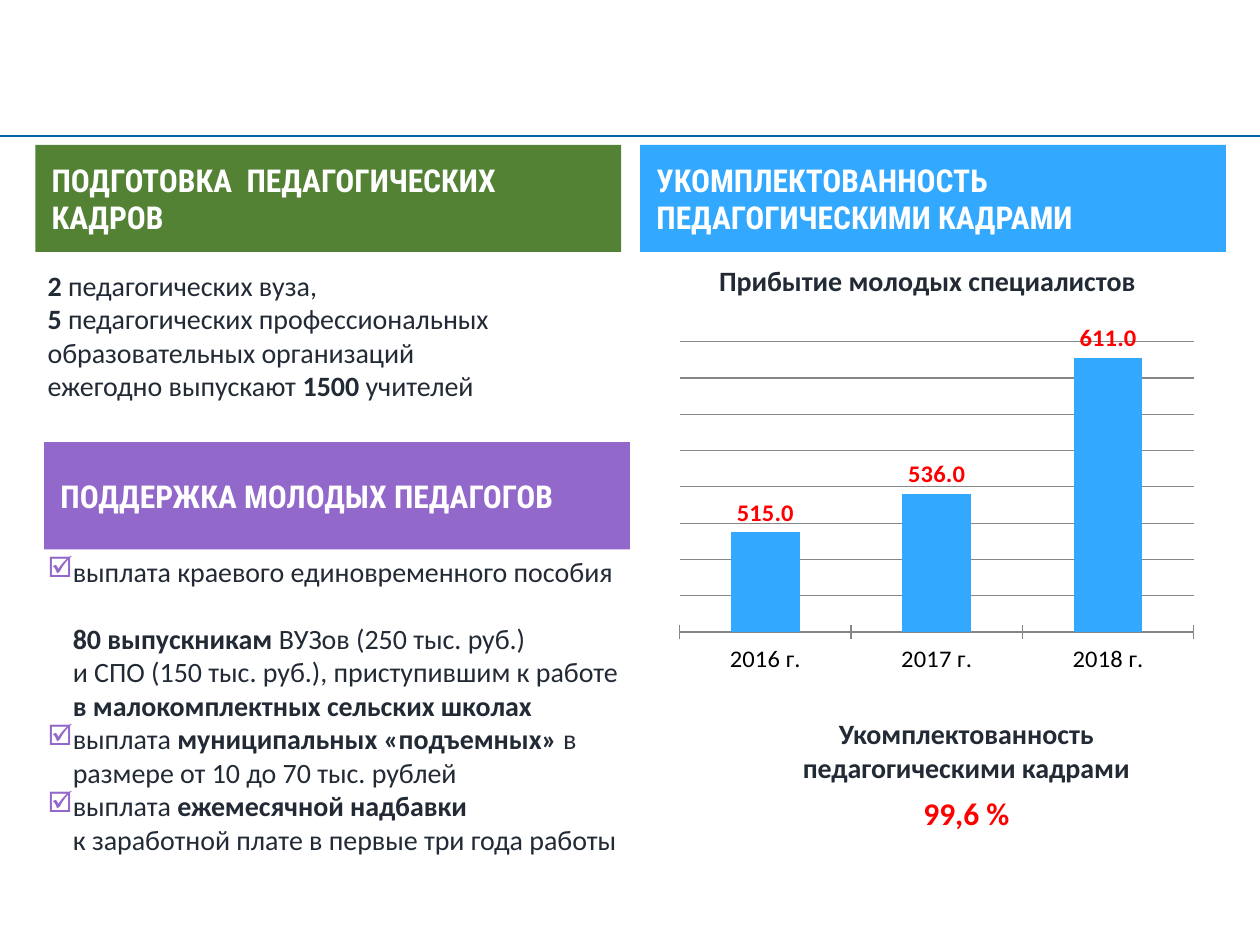
from lxml import etree
from pptx import Presentation
from pptx.chart import data
from pptx.dml import color
from pptx.enum import chart as ch, shapes, text
from pptx.oxml import ns
from pptx.util import Inches, Pt


def rgb(code):
    return color.RGBColor.from_string(code)


def write(box, paras, align=text.PP_ALIGN.LEFT):
    frame = box.text_frame
    frame.word_wrap = True
    for i, (size, tone, face, runs) in enumerate(paras):
        para = frame.add_paragraph() if i else frame.paragraphs[0]
        para.alignment = align
        para.font.size = Pt(size)
        para.font.name = face
        para.font.color.rgb = rgb(tone)
        bolds = {bold for _, bold in runs}
        if len(bolds) == 1:
            para.font.bold = bolds.pop()
        for words, bold in runs:
            for n, part in enumerate(words.split("\n")):
                if n:
                    para.add_line_break()
                if part:
                    run = para.add_run()
                    run.text = part
                    if para.font.bold is None:
                        run.font.bold = bold
    return frame


INK, RED, BLUE, PURPLE = "222A35", "FF0000", "33A8FF", "9268CA"
BODY = (16, INK, "Calibri")

deck = Presentation()
deck.slide_width, deck.slide_height = Inches(10), Inches(7.5)
slide = deck.slides.add_slide(deck.slide_layouts[6])
items = slide.shapes

rule = items.add_connector(
    shapes.MSO_CONNECTOR.STRAIGHT, 0, Inches(1.08), Inches(10), Inches(1.08))
rule.line.color.rgb = rgb("0068A6")
rule.line.width = Pt(1)
etree.SubElement(rule._element.spPr, ns.qn("a:effectLst"))

heads = [
    (5.08, 1.15, BLUE, "УКОМПЛЕКТОВАННОСТЬ ПЕДАГОГИЧЕСКИМИ КАДРАМИ"),
    (0.28, 1.15, "548235", "ПОДГОТОВКА  ПЕДАГОГИЧЕСКИХ КАДРОВ"),
    (0.35, 3.51, PURPLE, "ПОДДЕРЖКА МОЛОДЫХ ПЕДАГОГОВ"),
]
for x, y, fill, words in heads:
    head = items.add_shape(
        shapes.MSO_SHAPE.RECTANGLE, Inches(x), Inches(y), Inches(4.65), Inches(0.85))
    head.shadow.inherit = False
    head.fill.solid()
    head.fill.fore_color.rgb = rgb(fill)
    head.line.fill.background()
    frame = write(head, [(18, "FFFFFF", "Roboto Condensed", [(words, True)])])
    frame.vertical_anchor = text.MSO_ANCHOR.MIDDLE
    frame.margin_left = frame.margin_right = Inches(0.13)
    frame.margin_top = frame.margin_bottom = Inches(0.13)

title = items.add_textbox(Inches(5), Inches(2.04), Inches(4.72), Inches(0.37))
write(title, [(*BODY, [("Прибытие молодых специалистов", True)])],
      text.PP_ALIGN.CENTER)

stats = data.CategoryChartData()
stats.categories = ["2016 г.", "2017 г.", "2018 г."]
stats.add_series("Series 1", (515, 536, 611))
chart = items.add_chart(
    ch.XL_CHART_TYPE.COLUMN_CLUSTERED,
    Inches(5.31), Inches(2.57), Inches(4.25), Inches(2.83), stats).chart
chart.has_legend = False
chart.has_title = False
chart.font.name = "Calibri"
chart.font.size = Pt(10)
chart.font.color.rgb = rgb("000000")

years = chart.category_axis
years.major_tick_mark = ch.XL_TICK_MARK.CROSS
years.tick_labels.font.size = Pt(14)
years.format.line.color.rgb = rgb("878787")
scale = chart.value_axis
scale.visible = False
scale.minimum_scale, scale.maximum_scale, scale.major_unit = 460, 620, 20
scale.has_major_gridlines = True
scale.major_gridlines.format.line.color.rgb = rgb("878787")

plot = chart.plots[0]
plot.gap_width = 150
plot.vary_by_categories = False
bars = plot.series[0].format.fill
bars.solid()
bars.fore_color.rgb = rgb(BLUE)
plot.has_data_labels = True
marks = plot.data_labels
marks.show_value = True
marks.position = ch.XL_LABEL_POSITION.OUTSIDE_END
marks.number_format = "0.0"
marks.number_format_is_linked = False
marks.font.size = Pt(14)
marks.font.bold = True
marks.font.color.rgb = rgb(RED)

total = items.add_textbox(Inches(5.94), Inches(5.64), Inches(3.46), Inches(1.03))
frame = write(total, [
    (*BODY, [("Укомплектованность\nпедагогическими кадрами", True)]),
    (18, RED, "Calibri", [("99,6 %", True)]),
], text.PP_ALIGN.CENTER)
frame.paragraphs[1].space_before = Pt(6)

staff = items.add_textbox(Inches(0.28), Inches(2.08), Inches(4.64), Inches(1.18))
write(staff, [
    (*BODY, [("2", True), (" педагогических вуза,", False)]),
    (*BODY, [("5", True),
             (" педагогических профессиональных образовательных организаций", False)]),
    (*BODY, [("ежегодно выпускают ", False), ("1500", True), (" учителей", False)]),
])

aid = items.add_textbox(Inches(0.28), Inches(4.35), Inches(4.8), Inches(2.26))
frame = write(aid, [
    (*BODY, [("выплата краевого единовременного пособия", False)]),
    (*BODY, [("80 выпускникам", True),
             (" ВУЗов (250 тыс. руб.)\nи СПО (150 тыс. руб.), приступившим к работе\n",
              False),
             ("в малокомплектных сельских школах", True)]),
    (*BODY, [("выплата ", False), ("муниципальных «подъемных» ", True),
             ("в размере от 10 до 70 тыс. рублей", False)]),
    (*BODY, [("выплата ", False), ("ежемесячной надбавки\n", True),
             ("к заработной плате в первые три года работы", False)]),
])
for i, para in enumerate(frame.paragraphs):
    props = para._p.get_or_add_pPr()
    props.set("marL", str(Inches(0.2)))
    if i == 1:
        para.space_before = Pt(19)
        continue
    props.set("indent", str(Inches(-0.2)))
    tint = etree.Element(ns.qn("a:buClr"))
    etree.SubElement(tint, ns.qn("a:srgbClr"), val=PURPLE)
    sign = etree.Element(ns.qn("a:buChar"), char="☑")
    props.insert(0, tint)
    props.insert(1, sign)

deck.save("out.pptx")
